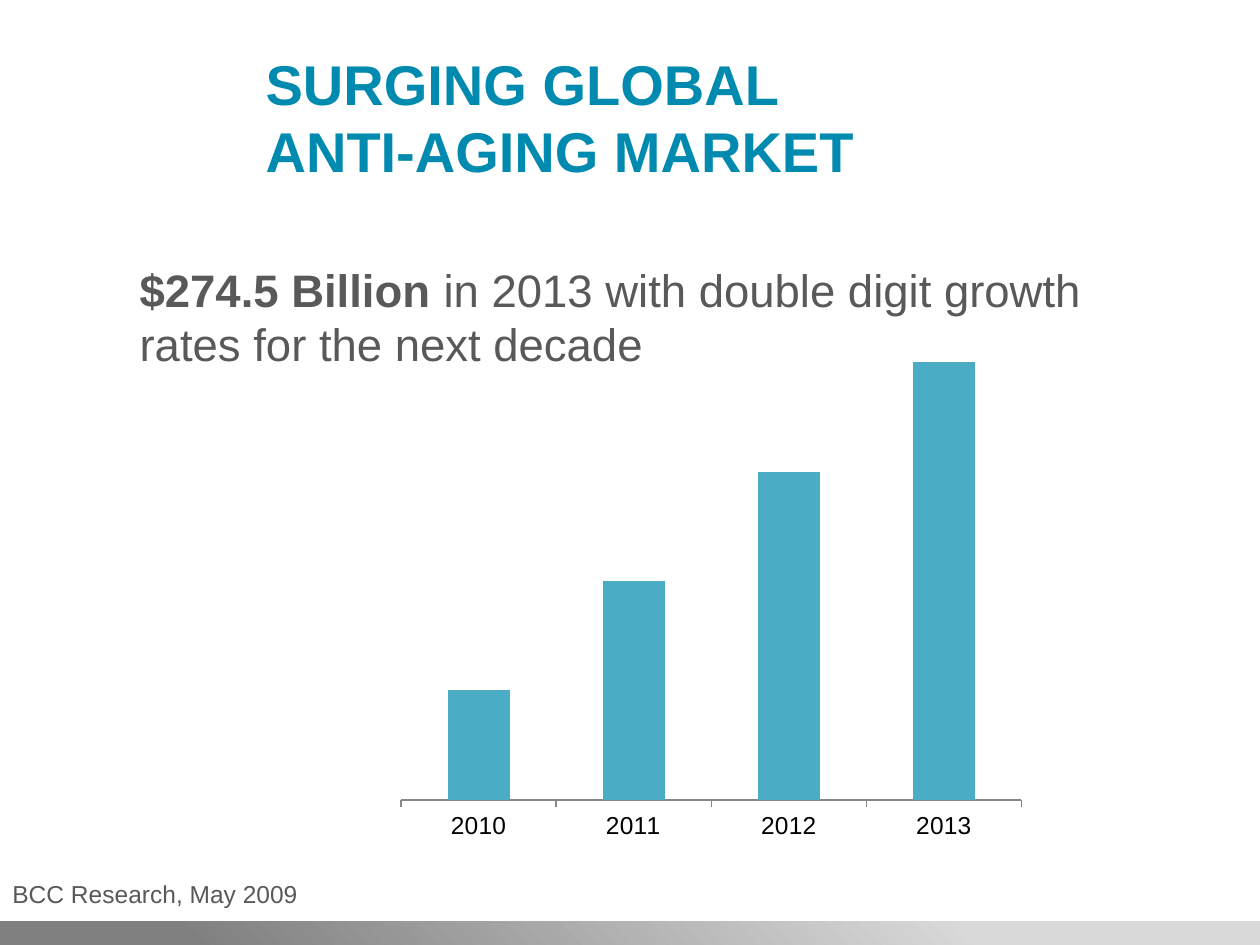
from lxml import etree
from pptx import Presentation
from pptx.chart.data import CategoryChartData
from pptx.dml.color import RGBColor
from pptx.enum import chart as charts, shapes, text
from pptx.oxml import parse_xml
from pptx.oxml.ns import nsdecls, qn
from pptx.util import Inches, Pt

TEAL, GRAY, BAR, AXIS = "008AB0", "595959", "4BACC6", "878787"


def color(value):
    return RGBColor.from_string(value)


def set_font(font, size, shade, bold=False):
    values = {"name": "Arial", "size": Pt(size), "bold": bold}
    for name, value in values.items():
        setattr(font, name, value)
    font.color.rgb = color(shade)


def add_text(page, place, spans, size, shade, anchor=text.MSO_ANCHOR.TOP):
    """Add one paragraph made of (wording, bold) spans."""
    box = page.shapes.add_textbox(*map(Inches, place))
    frame = box.text_frame
    frame.word_wrap = True
    frame.vertical_anchor = anchor
    para = frame.paragraphs[0]
    for index, (wording, bold) in enumerate(spans):
        for row, line in enumerate(wording.split("\n")):
            if row:
                para.add_line_break()
            span = para.add_run()
            span.text = line
            set_font(span.font, size, shade, bold)


def add_footer_band(page):
    band = page.shapes.add_shape(
        shapes.MSO_SHAPE.RECTANGLE, *map(Inches, (0, 7.31, 10, 0.19)))
    band.shadow.inherit = False
    band.line.fill.background()
    # Radial gradient that spreads from the top right corner
    gradient = parse_xml(
        f'<a:gradFill {nsdecls("a")} rotWithShape="1"><a:gsLst>'
        '<a:gs pos="23000"><a:srgbClr val="D9D9D9"/></a:gs>'
        '<a:gs pos="85000"><a:srgbClr val="808080"/></a:gs></a:gsLst>'
        '<a:path path="circle"><a:fillToRect l="100000" b="100000"/></a:path>'
        '</a:gradFill>')
    band.element.spPr.find(qn("a:prstGeom")).addnext(gradient)


def place_plot(chart, **fractions):
    """Fix the inner plot area as fractions of the chart frame."""
    plot_area = chart.element.find(".//" + qn("c:plotArea"))
    for old in plot_area.findall(qn("c:layout")):
        plot_area.remove(old)
    layout = etree.Element(qn("c:layout"))
    manual = etree.SubElement(layout, qn("c:manualLayout"))
    settings = {"layoutTarget": "inner", "xMode": "edge", "yMode": "edge"}
    for tag, value in {**settings, **fractions}.items():
        etree.SubElement(manual, qn("c:" + tag)).set("val", str(value))
    plot_area.insert(0, layout)


def add_column_chart(page):
    data = CategoryChartData()
    data.categories = ["2010", "2011", "2012", "2013"]
    data.add_series("Series 1", (25, 50, 75, 100))
    chart = page.shapes.add_chart(
        charts.XL_CHART_TYPE.COLUMN_CLUSTERED,
        *map(Inches, (3.08, 2.31, 5.13, 4.44)), data).chart
    chart.has_legend = False
    chart.has_title = False
    set_font(chart.font, 18, "000000")
    chart.font.name = "Calibri"

    # Bars
    plot = chart.plots[0]
    plot.gap_width = 150
    plot.vary_by_categories = False
    fill = plot.series[0].format.fill
    fill.solid()
    fill.fore_color.rgb = color(BAR)

    # Axes
    years = chart.category_axis
    years.major_tick_mark = charts.XL_TICK_MARK.OUTSIDE
    years.format.line.color.rgb = color(AXIS)
    set_font(years.tick_labels.font, 14, "000000")
    amounts = chart.value_axis
    limits = {"visible": False, "has_major_gridlines": False,
              "minimum_scale": 0, "maximum_scale": 100}
    for name, value in limits.items():
        setattr(amounts, name, value)
    place_plot(chart, x=0.02, y=0.127, w=0.96, h=0.783)


def main():
    deck = Presentation()
    deck.slide_width, deck.slide_height = Inches(10), Inches(7.5)
    page = deck.slides.add_slide(deck.slide_layouts[6])

    add_footer_band(page)
    # Title and key figure
    add_text(page, (2.01, 0.3, 7.99, 1.25),
             [("SURGING GLOBAL\nANTI-AGING MARKET", True)],
             32, TEAL, text.MSO_ANCHOR.MIDDLE)
    add_text(page, (1.01, 2.03, 8.07, 1.94),
             [("$274.5 Billion ", True),
              ("in 2013 with double digit growth rates for the next decade",
               False)], 26, GRAY)
    add_column_chart(page)
    # Source line
    add_text(page, (0, 6.93, 3.25, 0.34),
             [("BCC Research, May 2009", False)], 14, GRAY)
    deck.save("out.pptx")


if __name__ == "__main__":
    main()
